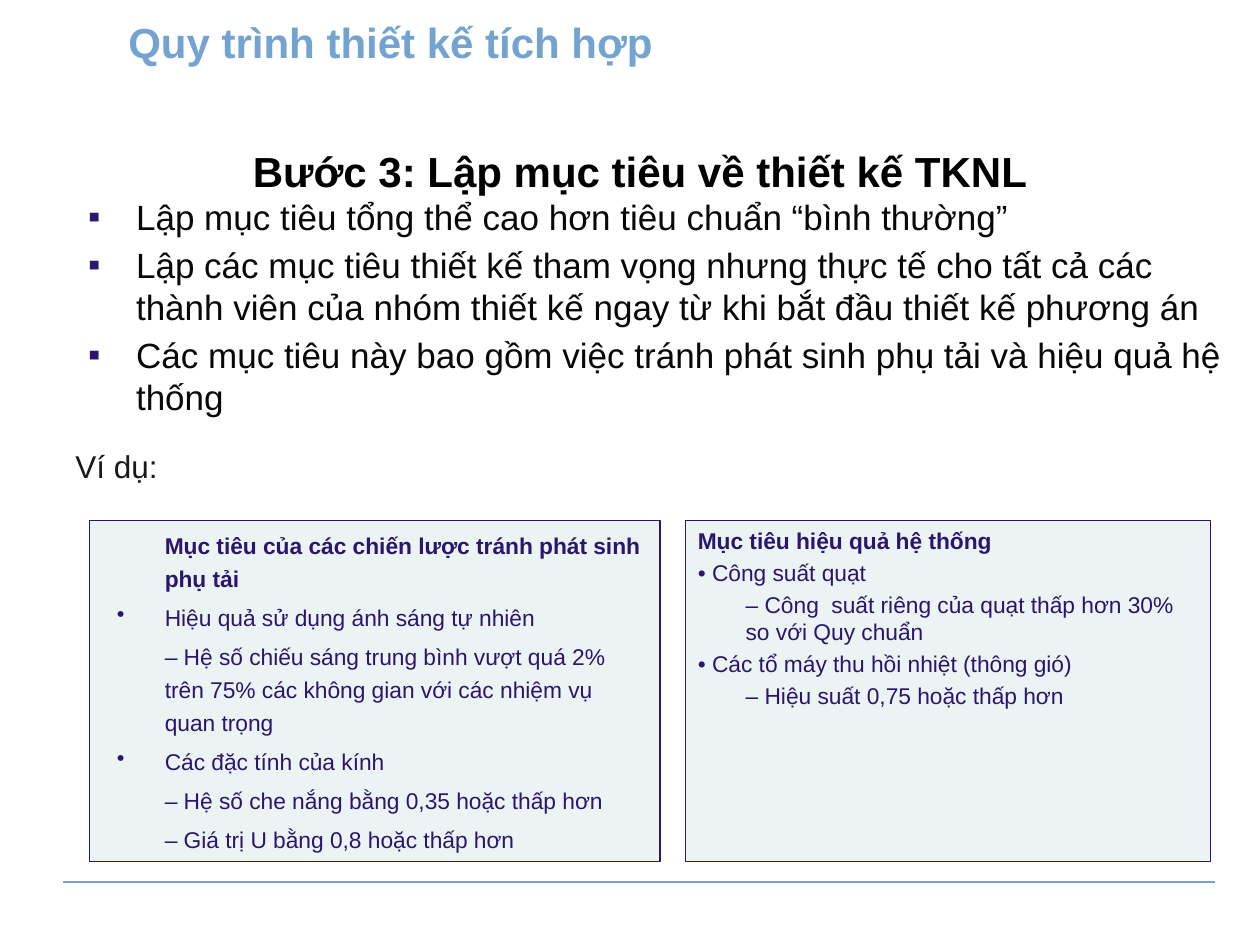
import pptx
import pptx.util
import pptx.dml.color
import pptx.enum.shapes
import pptx.enum.text
import pptx.oxml.ns
import lxml.etree

Inch = pptx.util.Inches
Pt = pptx.util.Pt
Align = pptx.enum.text.PP_ALIGN
Anchor = pptx.enum.text.MSO_ANCHOR
Fit = pptx.enum.text.MSO_AUTO_SIZE

HUES = {"sky": "73A3D1", "navy": "2B166E", "teal": "458F8F",
        "ink": "080808", "grey": "191919", "black": "000000"}
WIDE, HIGH = 10, 7.5
BOX_TOP, BOX_HIGH = 4.13, 2.71

GOALS = [
    "Lập mục tiêu tổng thể cao hơn tiêu chuẩn “bình thường”",
    "Lập các mục tiêu thiết kế tham vọng nhưng thực tế cho tất cả các "
    "thành viên của nhóm thiết kế ngay từ khi bắt đầu thiết kế phương án",
    "Các mục tiêu này bao gồm việc tránh phát sinh phụ tải và hiệu quả hệ thống",
]
LOADS = [
    "\tMục tiêu của các chiến lược tránh phát sinh phụ tải",
    "Hiệu quả sử dụng ánh sáng tự nhiên",
    "\t– Hệ số chiếu sáng trung bình vượt quá 2% trên 75% các không gian "
    "với các nhiệm vụ quan trọng",
    "Các đặc tính của kính",
    "\t– Hệ số che nắng bằng 0,35 hoặc thấp hơn",
    "\t– Giá trị U bằng 0,8 hoặc thấp hơn",
]
GAINS = [
    "Mục tiêu hiệu quả hệ thống",
    "• Công suất quạt",
    "\t– Công  suất riêng của quạt thấp hơn 30% so với Quy chuẩn",
    "• Các tổ máy thu hồi nhiệt (thông gió)",
    "\t– Hiệu suất 0,75 hoặc thấp hơn",
]


def tint(name):
    return pptx.dml.color.RGBColor.from_string(HUES[name])


def add_tag(node, tag, **attrs):
    return lxml.etree.SubElement(node, pptx.oxml.ns.qn(tag), **attrs)


def place(shape, left, top, width, height):
    shape.left, shape.top = Inch(left), Inch(top)
    shape.width, shape.height = Inch(width), Inch(height)


def mark(para, sign, inset, hang):
    props = para._p.get_or_add_pPr()
    props.set("marL", str(Inch(inset)))
    props.set("indent", str(Inch(-hang)))
    if sign:
        add_tag(add_tag(props, "a:buClr"), "a:srgbClr", val=HUES["navy"])
        add_tag(props, "a:buChar", char=sign)
    else:
        add_tag(props, "a:buNone")


def write(shape, lines, size, hue, bold=False, head=False, align=Align.LEFT,
          anchor=Anchor.TOP, sign=None, inset=0, hang=0, gap=0, lead=1):
    frame = shape.text_frame
    frame.word_wrap = True
    frame.auto_size = Fit.NONE
    frame.vertical_anchor = anchor
    for row, line in enumerate(lines):
        para = frame.paragraphs[0] if row == 0 else frame.add_paragraph()
        top = head and row == 0
        plain = top or line.startswith(("\t", "•"))
        mark(para, None if plain else sign, inset, hang)
        para.alignment = align
        para.line_spacing = lead
        para.space_before = Pt(gap if row else 0)
        run = para.add_run()
        run.text = line
        run.font.name = "Arial"
        run.font.size = Pt(size)
        run.font.bold = bold or top
        run.font.color.rgb = tint(hue)


def label(slide, spot, line, size, hue, **form):
    box = slide.shapes.add_textbox(*map(Inch, spot))
    write(box, [line], size, hue, **form)


def panel(slide, left, width, lines, **form):
    box = slide.shapes.add_shape(
        pptx.enum.shapes.MSO_SHAPE.RECTANGLE,
        *map(Inch, (left, BOX_TOP, width, BOX_HIGH)))
    box.shadow.inherit = False
    box.fill.solid()
    box.fill.fore_color.rgb = tint("teal")
    shade = box._element.spPr.find(".//" + pptx.oxml.ns.qn("a:srgbClr"))
    add_tag(shade, "a:alpha", val="10000")
    box.line.color.rgb = tint("navy")
    box.line.width = Pt(0.75)
    write(box, lines, 13, "navy", head=True, **form)


def rule(slide, left, right, top):
    line = slide.shapes.add_connector(
        pptx.enum.shapes.MSO_CONNECTOR.STRAIGHT,
        *map(Inch, (left, top, right, top)))
    line.line.color.rgb = tint("sky")
    line.line.width = Pt(1.5)
    add_tag(line._element.spPr, "a:effectLst")


def main():
    deck = pptx.Presentation()
    deck.slide_width, deck.slide_height = Inch(WIDE), Inch(HIGH)
    slide = deck.slides.add_slide(deck.slide_layouts[1])
    title, body = slide.placeholders

    rule(slide, 0.5, 9.64, 7)
    place(title, 0.58, 0.92, 9, 1.25)
    write(title, ["Bước 3: Lập mục tiêu về thiết kế TKNL"], 24, "black",
          bold=True, align=Align.CENTER, anchor=Anchor.MIDDLE)
    title.text_frame.margin_bottom = Inch(0.43)
    label(slide, (0.92, 0.08, 7.08, 0.5), "Quy trình thiết kế tích hợp",
          24, "sky", bold=True)
    label(slide, (0.5, 3.5, 3.08, 0.4), "Ví dụ:", 18, "grey")
    place(body, 0.48, 1.5, WIDE - 0.48, 2)
    write(body, GOALS, 20, "ink", sign="▪", inset=0.5, hang=0.38, gap=3.6)
    panel(slide, 0.71, 4.53, LOADS, sign="•", inset=0.5, hang=0.38,
          gap=3.6, lead=1.2)
    panel(slide, 5.44, 4.17, GAINS, inset=0.38, hang=0.38, gap=2.6)
    deck.save("out.pptx")


if __name__ == "__main__":
    main()
